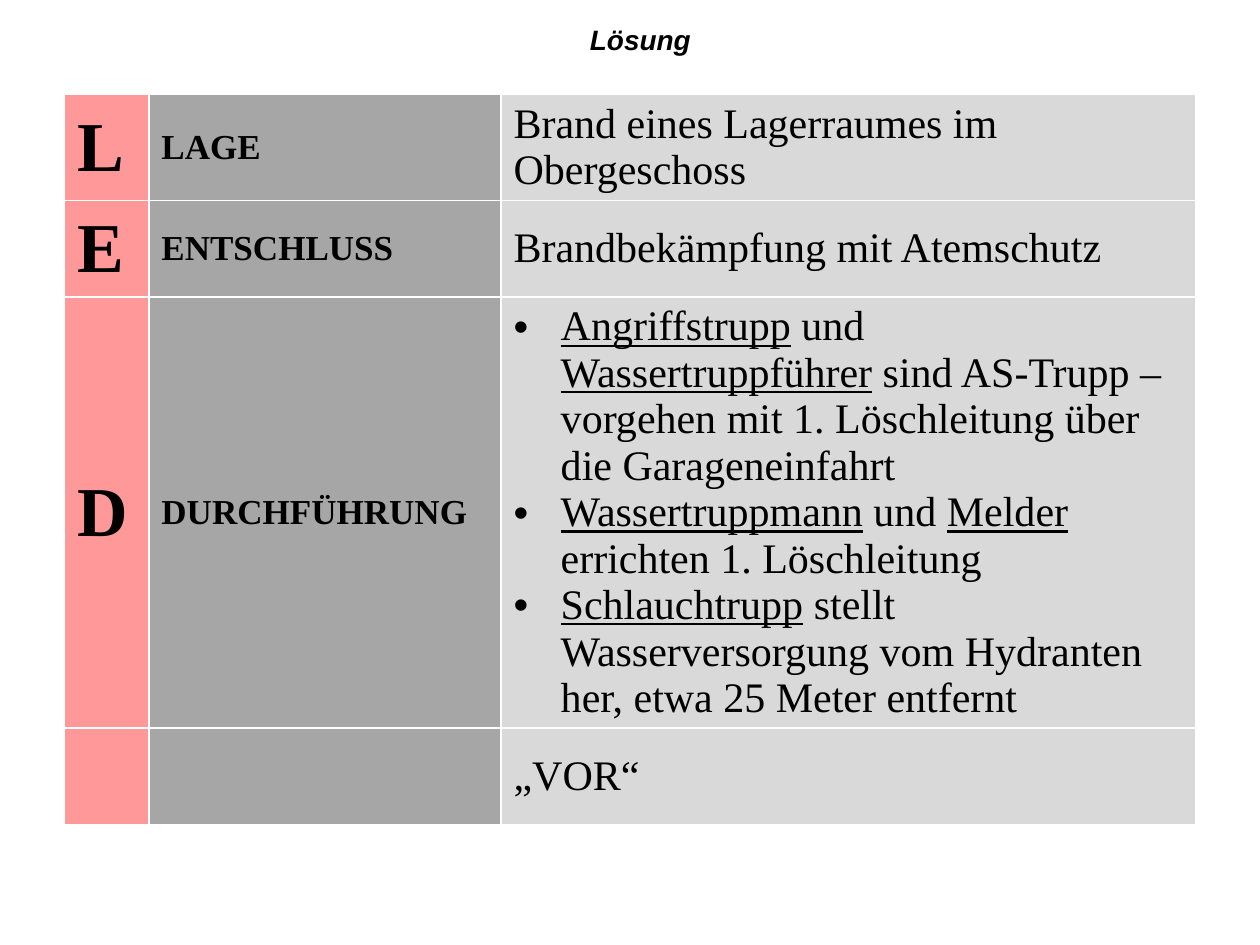
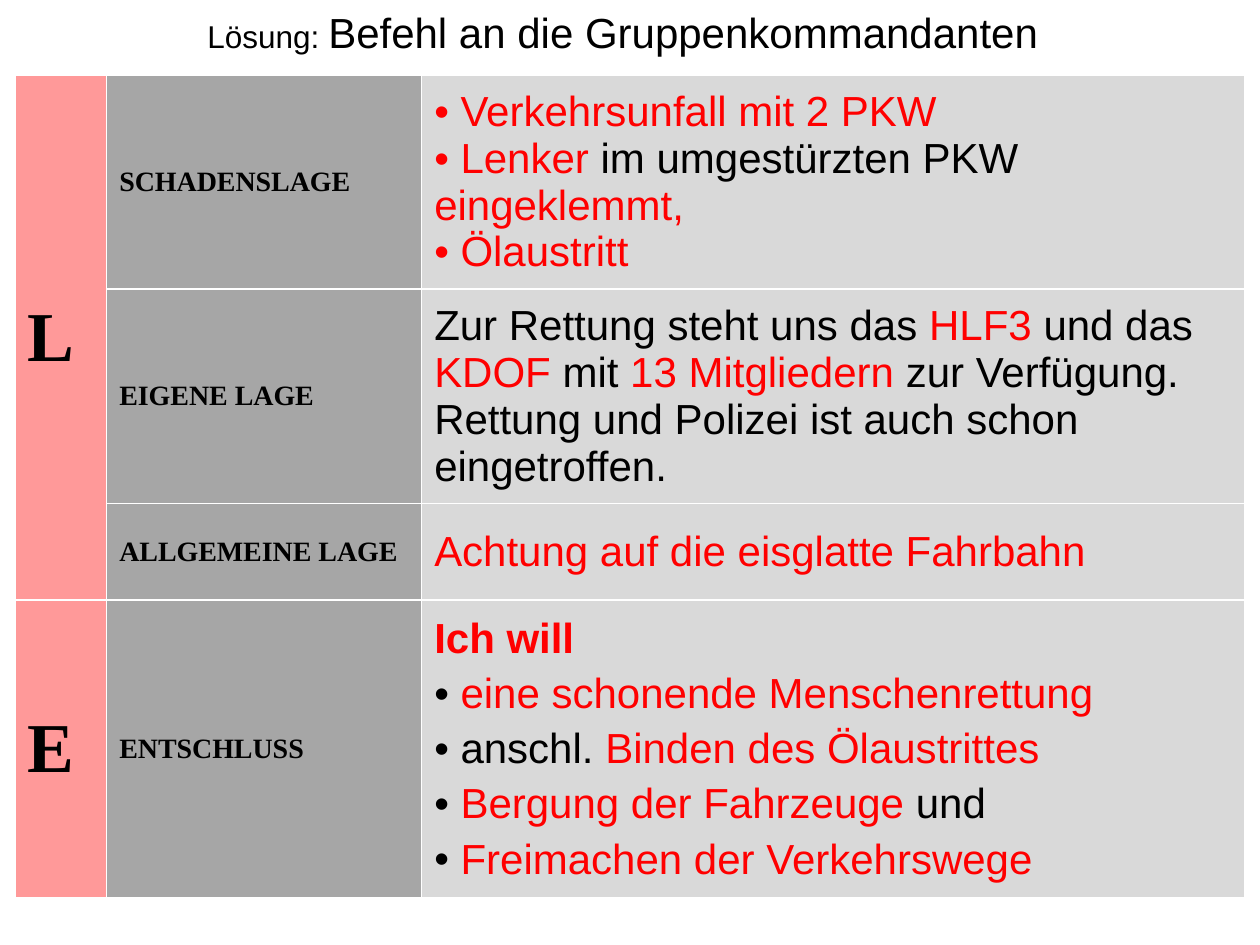
from dataclasses import dataclass

import pptx
import pptx.dml.color
import pptx.enum.text
import pptx.oxml.ns
import pptx.util
from lxml import etree
from pptx.util import Cm, Pt

COLOURS = {
    "paper": "FFFFFF",
    "text": "000000",
    "emphasis": "FF0000",
    "letter": "FF9999",
    "label": "A6A6A6",
    "content": "D9D9D9",
}
SANS, SERIF = "Arial", "Times New Roman"
TITLE_ONLY_LAYOUT = 5
SPACING = 4.8


@dataclass
class Run:
    text: str
    colour: str = "text"
    underline: bool = False
    size: int | None = None


@dataclass
class TextLine:
    runs: list[Run]
    size: int = 24
    font: str = SANS
    bold: bool = False
    italic: bool = False
    centred: bool = False
    bullet: bool = False
    hanging: float = 0
    space_before: float = 0


@dataclass
class OrderRow:
    """One table row; a letter of None continues the letter cell above."""
    letter: str | None
    label: str
    content: list[TextLine]
    height: float


@dataclass
class OrderSlide:
    title: TextLine
    title_box: tuple[float, float, float, float]
    title_filled: bool
    table_corner: tuple[float, float]
    column_widths: tuple[float, float, float]
    label_size: int
    rows: list[OrderRow]


def rgb(colour: str) -> pptx.dml.color.RGBColor:
    return pptx.dml.color.RGBColor.from_string(COLOURS[colour])


def add_element(parent, tag: str, **attributes: str):
    return etree.SubElement(parent, pptx.oxml.ns.qn(tag), attributes)


def set_bullet(paragraph, hanging: float) -> None:
    properties = paragraph._p.get_or_add_pPr()
    properties.set("marL", str(Cm(hanging)))
    properties.set("indent", str(-Cm(hanging)))
    add_element(properties, "a:buFont", typeface=SANS)
    add_element(properties, "a:buChar", char="•")


def write_lines(text_frame, lines: list[TextLine]) -> None:
    for index, line in enumerate(lines):
        paragraph = text_frame.add_paragraph() if index else text_frame.paragraphs[0]
        if line.bullet:
            set_bullet(paragraph, line.hanging)
        if line.space_before:
            paragraph.space_before = Pt(line.space_before)
        if line.centred:
            paragraph.alignment = pptx.enum.text.PP_ALIGN.CENTER
        paragraph.font.name = line.font
        paragraph.font.size = Pt(line.size)
        paragraph.font.bold = line.bold
        paragraph.font.italic = line.italic
        for part in line.runs:
            run = paragraph.add_run()
            run.text = part.text
            run.font.color.rgb = rgb(part.colour)
            if part.underline:
                run.font.underline = True
            if part.size:
                run.font.size = Pt(part.size)


def format_cell(cell, fill: str) -> None:
    """Fill the cell, centre it vertically and give it thin white borders."""
    cell.vertical_anchor = pptx.enum.text.MSO_ANCHOR.MIDDLE
    properties = cell._tc.get_or_add_tcPr()
    for side in ("a:lnL", "a:lnR", "a:lnT", "a:lnB"):
        border = add_element(properties, side, w=str(Pt(1)))
        border_fill = add_element(border, "a:solidFill")
        add_element(border_fill, "a:srgbClr", val=COLOURS["paper"])
    cell.fill.solid()
    cell.fill.fore_color.rgb = rgb(fill)


def heading(text: str, size: int) -> list[TextLine]:
    return [TextLine([Run(text)], size, SERIF, bold=True)] if text else []


def add_title(slide, order: OrderSlide) -> None:
    title = slide.shapes.title
    title.left, title.top, title.width, title.height = map(Cm, order.title_box)
    if order.title_filled:
        title.fill.solid()
        title.fill.fore_color.rgb = rgb("paper")
    title.text_frame.word_wrap = True
    title.text_frame.auto_size = pptx.enum.text.MSO_AUTO_SIZE.NONE
    title.text_frame.vertical_anchor = pptx.enum.text.MSO_ANCHOR.TOP
    write_lines(title.text_frame, [order.title])


def add_order_table(slide, order: OrderSlide) -> None:
    left, top = map(Cm, order.table_corner)
    width = Cm(sum(order.column_widths))
    height = Cm(sum(row.height for row in order.rows))
    table = slide.shapes.add_table(len(order.rows), 3, left, top, width, height).table
    table.first_row = table.horz_banding = False
    for column, column_width in zip(table.columns, order.column_widths):
        column.width = Cm(column_width)
    letter_row = 0
    for index, row in enumerate(order.rows):
        table.rows[index].height = Cm(row.height)
        cells = {
            "letter": heading(row.letter or "", 40),
            "label": heading(row.label, order.label_size),
            "content": row.content,
        }
        for column_index, (fill, lines) in enumerate(cells.items()):
            cell = table.cell(index, column_index)
            format_cell(cell, fill)
            write_lines(cell.text_frame, lines)
        if row.letter is not None:
            letter_row = index
        elif index + 1 == len(order.rows) or order.rows[index + 1].letter is not None:
            table.cell(letter_row, 0).merge(table.cell(index, 0))


def red(text: str) -> Run:
    return Run(text, "emphasis")


def underlined(text: str) -> Run:
    return Run(text, underline=True)


def serif_line(text: str) -> TextLine:
    return TextLine([Run(text)], font=SERIF)


def task(*runs: Run) -> TextLine:
    return TextLine(list(runs), font=SERIF, bullet=True, hanging=0.95)


def point(*runs: Run, space_before: float = 0) -> TextLine:
    return TextLine(list(runs), bullet=True, space_before=space_before)


def spaced(*runs: Run, bold: bool = False) -> TextLine:
    return TextLine(list(runs), bold=bold, space_before=SPACING)


FIRE_ORDER = OrderSlide(
    title=TextLine([Run("Lösung")], 16, bold=True, italic=True, centred=True),
    title_box=(9.1, 0.33, 7.62, 1.02),
    title_filled=True,
    table_corner=(1.3, 1.91),
    column_widths=(1.7, 7.1, 14),
    label_size=20,
    rows=[
        OrderRow("L", "LAGE",
                 [serif_line("Brand eines Lagerraumes im Obergeschoss")], 2.1),
        OrderRow("E", "ENTSCHLUSS",
                 [serif_line("Brandbekämpfung mit Atemschutz")], 1.95),
        OrderRow("D", "DURCHFÜHRUNG", [
            task(underlined("Angriffstrupp"), Run(" und "),
                 underlined("Wassertruppführer"),
                 Run(" sind AS-Trupp – vorgehen mit 1. Löschleitung "
                     "über die Garageneinfahrt")),
            task(underlined("Wassertruppmann"), Run(" und "),
                 underlined("Melder"), Run(" errichten 1. Löschleitung")),
            task(underlined("Schlauchtrupp"),
                 Run(" stellt Wasserversorgung vom Hydranten her, "
                     "etwa 25 Meter entfernt")),
        ], 8.69),
        OrderRow("", "", [serif_line("„VOR“")], 1.95),
    ],
)

ACCIDENT_ORDER = OrderSlide(
    title=TextLine([Run("Lösung: ", size=18),
                    Run("Befehl an die Gruppenkommandanten", size=24)], centred=True),
    title_box=(0.3, 0, 24.51, 1.28),
    title_filled=False,
    table_corner=(0.3, 1.51),
    column_widths=(1.85, 6.35, 16.6),
    label_size=16,
    rows=[
        OrderRow("L", "SCHADENSLAGE", [
            point(red(" Verkehrsunfall mit 2 PKW")),
            point(red(" Lenker"), Run(" im umgestürzten PKW "), red("eingeklemmt,")),
            point(red(" Ölaustritt")),
        ], 4.32),
        OrderRow(None, "EIGENE LAGE", [
            spaced(Run("Zur Rettung steht uns das"), red(" HLF3 "), Run("und das"),
                   red(" KDOF "), Run("mit"), red(" 13 Mitgliedern "),
                   Run("zur Verfügung. Rettung und Polizei ist auch schon "
                       "eingetroffen.")),
        ], 4.32),
        OrderRow(None, "ALLGEMEINE LAGE",
                 [spaced(red("Achtung auf die eisglatte Fahrbahn"))], 1.95),
        OrderRow("E", "ENTSCHLUSS", [
            spaced(red("Ich will"), bold=True),
            point(Run(" "), red("eine schonende Menschenrettung"),
                  space_before=SPACING),
            point(Run(" anschl. "), red("Binden des Ölaustrittes"),
                  space_before=SPACING),
            point(Run(" "), red("Bergung der Fahrzeuge "), Run("und"),
                  space_before=SPACING),
            point(Run(" "), red("Freimachen der Verkehrswege"),
                  space_before=SPACING),
        ], 6),
    ],
)


def main() -> None:
    presentation = pptx.Presentation()
    presentation.slide_width, presentation.slide_height = Cm(25.4), Cm(19.05)
    for order in (FIRE_ORDER, ACCIDENT_ORDER):
        slide = presentation.slides.add_slide(
            presentation.slide_layouts[TITLE_ONLY_LAYOUT])
        add_title(slide, order)
        add_order_table(slide, order)
    presentation.save("out.pptx")


if __name__ == "__main__":
    main()
